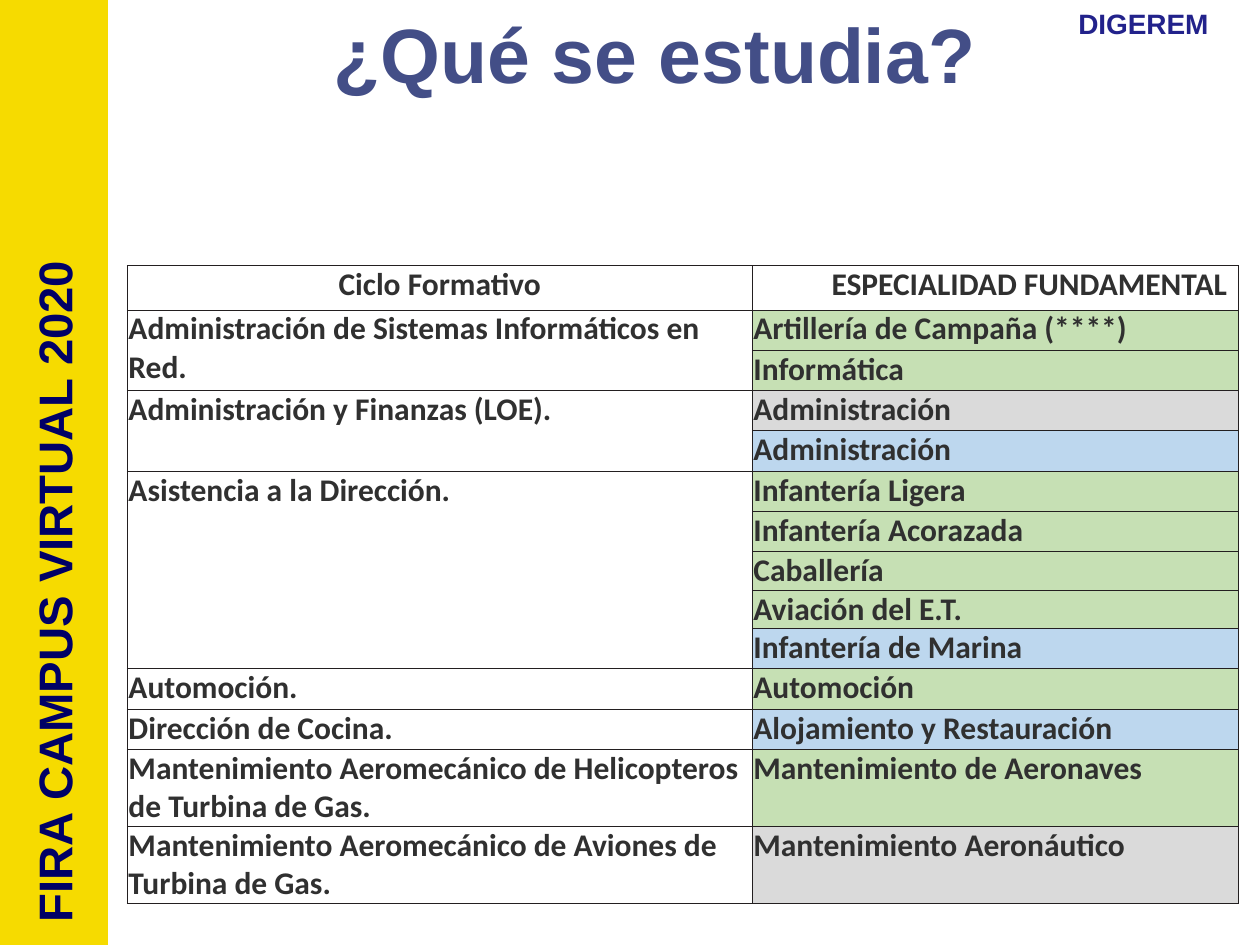
from lxml.etree import SubElement
from pptx import Presentation
from pptx.dml.color import RGBColor
from pptx.enum.shapes import MSO_SHAPE
from pptx.enum.text import MSO_ANCHOR, PP_ALIGN
from pptx.oxml.ns import qn
from pptx.util import Inches, Pt

COLORS = {
    "band": "F6DB00", "title": "434E87", "agency": "22228B", "event": "000066",
    "text": "303030", "border": "231F20",
    "green": "C6E0B4", "gray": "DADADA", "blue": "BDD7EE",
}
TITLE = "¿Qué se estudia?"
AGENCY = "DIGEREM"
EVENT = "FIRA CAMPUS VIRTUAL 2020"
HEADERS = [("Ciclo Formativo", 0), ("ESPECIALIDAD FUNDAMENTAL", 0.54)]
CYCLES = [
    ("Administración de Sistemas Informáticos en Red.",
     [("Artillería de Campaña (****)", "green"), ("Informática", "green")]),
    ("Administración y Finanzas (LOE).",
     [("Administración", "gray"), ("Administración", "blue")]),
    ("Asistencia a la Dirección.",
     [("Infantería Ligera", "green"), ("Infantería Acorazada", "green"),
      ("Caballería", "green"), ("Aviación del E.T.", "green"),
      ("Infantería de Marina", "blue")]),
    ("Automoción.", [("Automoción", "green")]),
    ("Dirección de Cocina.", [("Alojamiento y Restauración", "blue")]),
    ("Mantenimiento Aeromecánico de Helicopteros de Turbina de Gas.",
     [("Mantenimiento de Aeronaves", "green")]),
    ("Mantenimiento Aeromecánico de Aviones de Turbina de Gas.",
     [("Mantenimiento Aeronáutico", "gray")]),
]
COLUMN_WIDTHS = [4.96, 3.86]
ROW_HEIGHTS = [0.35] + [0.32] * 6 + [0.28] * 2 + [0.32] * 3 + [0.55, 0.56]


def rgb(name):
    return RGBColor.from_string(COLORS[name])


def write(frame, text, font_name, size, color, align):
    paragraph = frame.paragraphs[0]
    paragraph.alignment = align
    run = paragraph.add_run()
    run.text = text
    run.font.name = font_name
    run.font.size = Pt(size)
    run.font.bold = True
    run.font.color.rgb = rgb(color)
    return paragraph


def label(box, place, text, size, color, anchor):
    box.left, box.top, box.width, box.height = map(Inches, place)
    frame = box.text_frame
    frame.word_wrap = True
    frame.vertical_anchor = anchor
    write(frame, text, "Arial", size, color, PP_ALIGN.CENTER)


def format_cell(cell):
    cell.margin_left = cell.margin_right = cell.margin_top = cell.margin_bottom = 0
    cell.fill.background()
    properties = cell._tc.get_or_add_tcPr()
    for index, side in enumerate(("lnL", "lnR", "lnT", "lnB")):
        border = SubElement(properties, qn(f"a:{side}"), w=str(Pt(0.5)))
        solid = SubElement(border, qn("a:solidFill"))
        SubElement(solid, qn("a:srgbClr"), val=COLORS["border"])
        properties.insert(index, border)


def write_cell(cell, text, align=PP_ALIGN.LEFT, indent=0.01):
    paragraph = write(cell.text_frame, text, "Calibri", 18, "text", align)
    paragraph._p.get_or_add_pPr().set("marL", str(Inches(indent)))


def add_cycles_table(slide):
    table = slide.shapes.add_table(
        len(ROW_HEIGHTS), len(COLUMN_WIDTHS), Inches(1.01), Inches(2.11),
        Inches(sum(COLUMN_WIDTHS)), Inches(sum(ROW_HEIGHTS))).table
    table.first_row = table.horz_banding = False
    for column, width in zip(table.columns, COLUMN_WIDTHS):
        column.width = Inches(width)
    for row, height in zip(table.rows, ROW_HEIGHTS):
        row.height = Inches(height)
        for cell in row.cells:
            format_cell(cell)
    for column, (header, indent) in enumerate(HEADERS):
        write_cell(table.cell(0, column), header, PP_ALIGN.CENTER, indent)
    first = 1
    for cycle, specialties in CYCLES:
        last = first + len(specialties) - 1
        if last > first:
            table.cell(first, 0).merge(table.cell(last, 0))
        write_cell(table.cell(first, 0), cycle)
        for row, (specialty, color) in enumerate(specialties, first):
            cell = table.cell(row, 1)
            write_cell(cell, specialty)
            cell.fill.solid()
            cell.fill.fore_color.rgb = rgb(color)
        first = last + 1


def main():
    """Build the slide of training cycles and their specialties."""
    deck = Presentation()
    deck.slide_width, deck.slide_height = Inches(10), Inches(7.5)
    slide = deck.slides.add_slide(deck.slide_layouts[5])
    shapes = slide.shapes

    band = shapes.add_shape(MSO_SHAPE.RECTANGLE, 0, 0, Inches(0.85), Inches(7.5))
    band.shadow.inherit = False
    band.fill.solid()
    band.fill.fore_color.rgb = band.line.color.rgb = rgb("band")
    band.line.width = Pt(0.75)

    add_cycles_table(slide)
    label(shapes.title, (2.09, 0, 6.22, 0.83), TITLE, 44, "title", MSO_ANCHOR.MIDDLE)
    agency = shapes.add_textbox(0, 0, 0, 0)
    label(agency, (8.15, 0, 1.85, 0.37), AGENCY, 16, "agency", MSO_ANCHOR.TOP)
    event = shapes.add_textbox(0, 0, 0, 0)
    label(event, (-2.41, 4.41, 5.67, 0.57), EVENT, 27, "event", MSO_ANCHOR.MIDDLE)
    event.rotation = 270

    deck.save("out.pptx")


if __name__ == "__main__":
    main()
